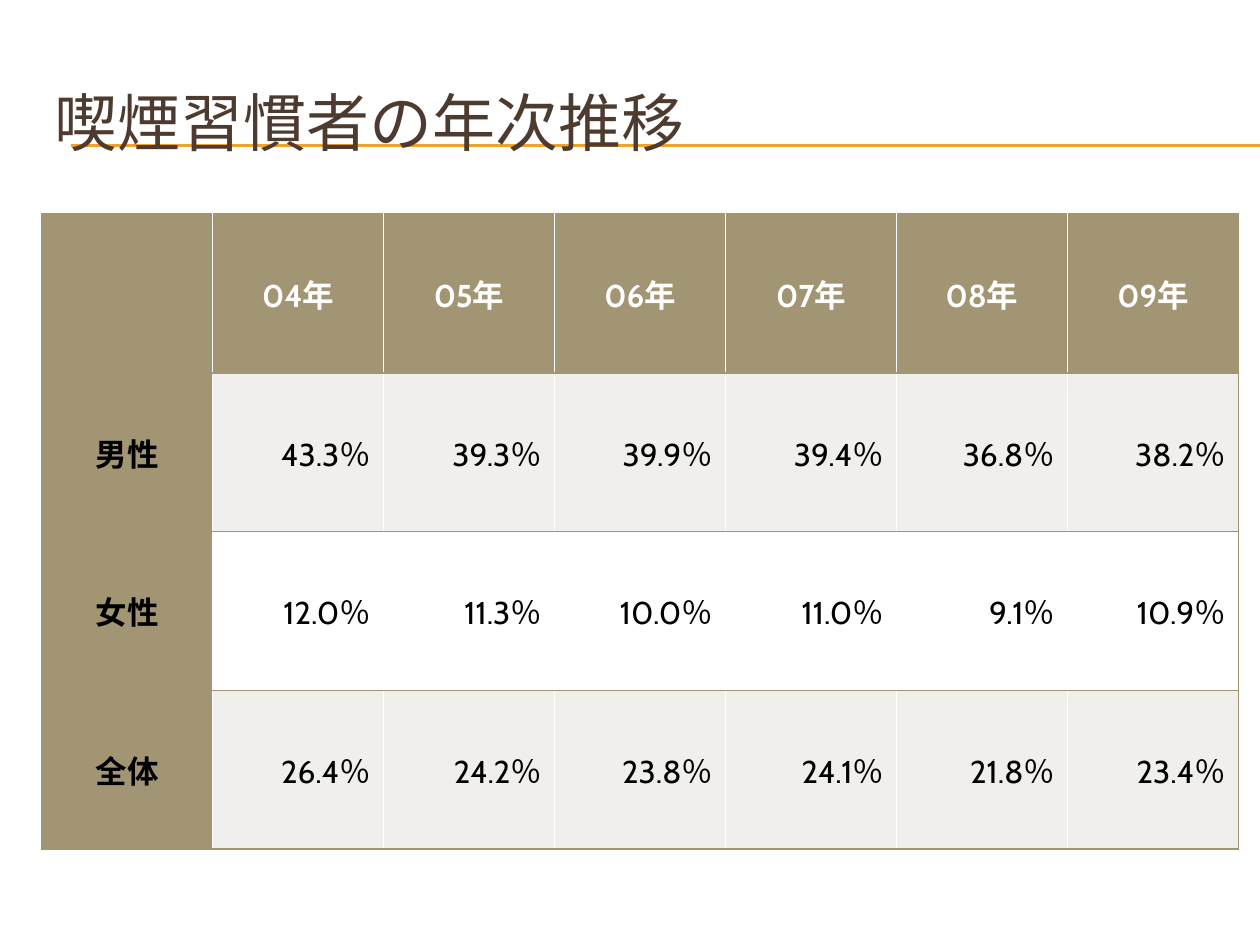
from lxml import etree
from pptx import Presentation
from pptx.dml.color import RGBColor
from pptx.enum.shapes import MSO_CONNECTOR
from pptx.enum.text import MSO_ANCHOR, PP_ALIGN
from pptx.oxml.ns import qn
from pptx.util import Inches, Pt

STRAIGHT = MSO_CONNECTOR.STRAIGHT
MIDDLE = MSO_ANCHOR.MIDDLE
LEFT, CENTER, RIGHT = PP_ALIGN.LEFT, PP_ALIGN.CENTER, PP_ALIGN.RIGHT
FONT = "Cabin"
TITLE_ONLY = 5
KHAKI, BAND, WHITE, BLACK = "A19574", "F0EFEB", "FFFFFF", "000000"
BROWN, ORANGE = "4E3B30", "F0A22E"
YEARS = ["04年", "05年", "06年", "07年", "08年", "09年"]
SMOKING_RATES = {
    "男性": [43.3, 39.3, 39.9, 39.4, 36.8, 38.2],
    "女性": [12.0, 11.3, 10.0, 11.0, 9.1, 10.9],
    "全体": [26.4, 24.2, 23.8, 24.1, 21.8, 23.4],
}


def color(value):
    """Turn a hex string into a colour."""
    return RGBColor.from_string(value)


def write(frame, text, size, hue, align, bold=False):
    """Write one formatted run into a text frame."""
    para = frame.paragraphs[0]
    para.alignment = align
    span = para.add_run()
    span.text = text
    span.font.name = FONT
    span.font.size = Pt(size)
    span.font.bold = bold
    span.font.color.rgb = color(hue)


def add_rule(slide, top):
    """Draw a thin rule from the left margin to the slide edge."""
    rule = slide.shapes.add_connector(
        STRAIGHT, Inches(0.56), Inches(top), Inches(10), Inches(top))
    rule.line.color.rgb = color(ORANGE)
    rule.line.width = Pt(0.75)
    etree.SubElement(rule._element.spPr, qn("a:effectLst"))


def place_title(slide, text):
    """Move and fill the title placeholder, in front of the rules."""
    title = slide.shapes.title
    title.left, title.top = Inches(0.33), Inches(0.5)
    title.width, title.height = Inches(9.5), Inches(0.92)
    title.text_frame.vertical_anchor = MIDDLE
    write(title.text_frame, text, 36, BROWN, LEFT)
    slide.shapes._spTree.append(title._element)


def add_borders(cell, sides):
    """Give the named sides of a cell a thin border."""
    properties = cell._tc.get_or_add_tcPr()
    for side in sides:
        line = etree.SubElement(properties, qn(f"a:ln{side}"), w=str(Pt(1)))
        fill = etree.SubElement(line, qn("a:solidFill"))
        etree.SubElement(fill, qn("a:srgbClr"), val=KHAKI)


def format_cell(cell, text, fill, hue, align, bold, sides):
    """Fill, border and write one table cell."""
    add_borders(cell, sides)
    cell.fill.solid()
    cell.fill.fore_color.rgb = color(fill)
    cell.vertical_anchor = MIDDLE
    if text:
        write(cell.text_frame, text, 18, hue, align, bold)


def add_rate_table(slide):
    """Add the table of smoking rates by year."""
    rows = [["", *YEARS]]
    for group, rates in SMOKING_RATES.items():
        rows.append([group, *(f"{rate:.1f}％" for rate in rates)])
    last = len(YEARS)
    table = slide.shapes.add_table(
        len(rows), last + 1, Inches(0.33), Inches(1.7),
        Inches(9.5), Inches(5.04)).table
    for r, row in enumerate(rows):
        for c, text in enumerate(row):
            heading = r == 0 or c == 0
            fill = KHAKI if heading else BAND if r % 2 else WHITE
            hue = WHITE if r == 0 else BLACK
            align = CENTER if heading else RIGHT
            sides = ["L"] * (c == 0) + ["R"] * (c == last) + ["T", "B"]
            format_cell(table.cell(r, c), text, fill, hue, align, heading, sides)


def main():
    """Build and save the deck."""
    deck = Presentation()
    deck.slide_width, deck.slide_height = Inches(10), Inches(7.5)
    slide = deck.slides.add_slide(deck.slide_layouts[TITLE_ONLY])
    for top in (1.15, 1.16):
        add_rule(slide, top)
    place_title(slide, "喫煙習慣者の年次推移")
    add_rate_table(slide)
    deck.save("out.pptx")


if __name__ == "__main__":
    main()
